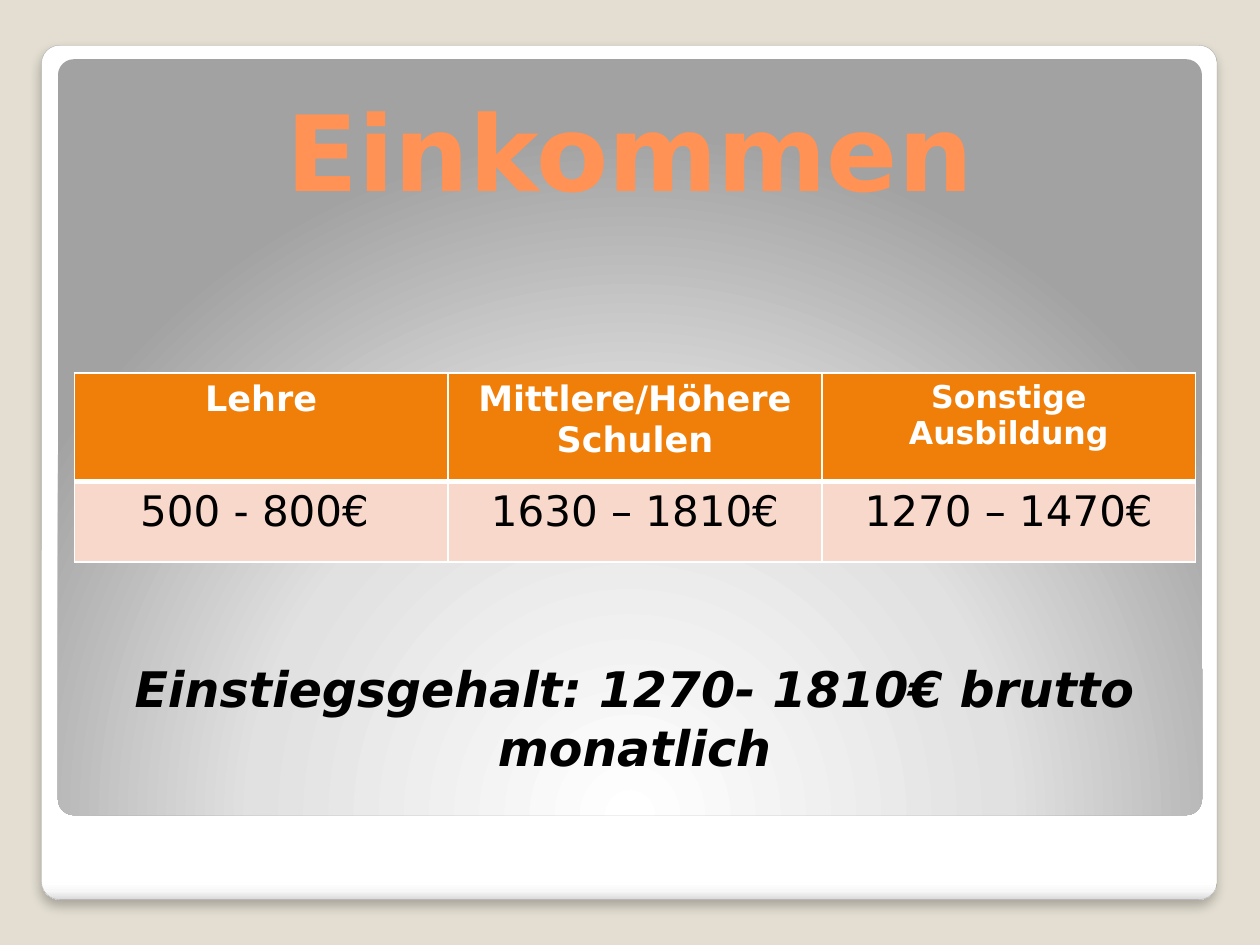
from lxml import etree
from pptx import Presentation
from pptx.dml.color import RGBColor
from pptx.enum.shapes import MSO_SHAPE as Shape
from pptx.enum.text import MSO_ANCHOR as Anchor, PP_ALIGN as Align
from pptx.oxml import parse_xml
from pptx.oxml.ns import nsdecls, qn
from pptx.util import Inches, Pt

BEIGE = RGBColor(0xE3, 0xDE, 0xD1)
WHITE = RGBColor(0xFF, 0xFF, 0xFF)
BLACK = RGBColor(0, 0, 0)
GREY = RGBColor(0xA4, 0xA4, 0xA4)
ORANGE = RGBColor(0xF0, 0x7F, 0x09)
PINK = RGBColor(0xF9, 0xD8, 0xCC)
CORAL = RGBColor(0xFF, 0x92, 0x54)

DOWNWARD = '<a:lin ang="5400000" scaled="0"/>'
FROM_BOTTOM = ('<a:path path="circle"><a:fillToRect l="50000" t="175000" '
               'r="50000" b="-75000"/></a:path>')


class SlideBuilder:
    font = "DejaVu Sans"

    def __init__(self, slide):
        self.slide = slide
        background = slide.background.fill
        background.solid()
        background.fore_color.rgb = BEIGE

    def panel(self, left, top, width, height, stops, direction):
        """Add a rounded panel with a gradient of (percent, colour) stops."""
        shape = self.slide.shapes.add_shape(
            Shape.ROUNDED_RECTANGLE, Inches(left), Inches(top), Inches(width), Inches(height))
        shape.adjustments[0] = 0.021
        shape.shadow.inherit = False
        shape.line.fill.background()
        shape.fill.background()
        stop_list = "".join(
            f'<a:gs pos="{percent * 1000}"><a:srgbClr val="{colour}"/></a:gs>'
            for percent, colour in stops)
        gradient = parse_xml(f'<a:gradFill {nsdecls("a")} rotWithShape="1">'
                             f'<a:gsLst>{stop_list}</a:gsLst>{direction}</a:gradFill>')
        properties = shape.element.spPr
        properties.replace(properties.find(qn("a:noFill")), gradient)
        return shape

    def drop_shadow(self, shape):
        effects = shape.element.spPr.find(qn("a:effectLst"))
        shadow = etree.SubElement(effects, qn("a:outerShdw"), blurRad=str(Pt(6)),
                                  dist=str(Pt(4)), dir="5400000", algn="t", rotWithShape="0")
        colour = etree.SubElement(shadow, qn("a:srgbClr"), val=str(BLACK))
        etree.SubElement(colour, qn("a:alpha"), val="25000")

    def set_text(self, text_frame, text, size, colour, bold=True, italic=False):
        text_frame.text = text
        paragraph = text_frame.paragraphs[0]
        paragraph.alignment = Align.CENTER
        font = paragraph.runs[0].font
        font.name, font.size, font.color.rgb = self.font, Pt(size), colour
        font.bold, font.italic = bold, italic

    def text(self, left, top, width, height, text, size, colour, italic=False):
        box = self.slide.shapes.add_textbox(
            Inches(left), Inches(top), Inches(width), Inches(height))
        frame = box.text_frame
        frame.word_wrap = True
        frame.vertical_anchor = Anchor.TOP
        frame.margin_top = frame.margin_bottom = 0
        self.set_text(frame, text, size, colour, italic=italic)

    def cell_borders(self, cell, top, bottom):
        properties = cell._tc.get_or_add_tcPr()
        widths = {"lnL": 1, "lnR": 1, "lnT": top, "lnB": bottom}
        for index, (side, width) in enumerate(widths.items()):
            properties.insert(index, parse_xml(
                f'<a:{side} {nsdecls("a")} w="{Pt(width)}"><a:solidFill>'
                f'<a:srgbClr val="{WHITE}"/></a:solidFill></a:{side}>'))

    def table(self, left, top, width, row_heights, rows):
        """Add a table; each row is (texts, sizes, text colour, fill, bold, border widths)."""
        table = self.slide.shapes.add_table(
            len(rows), len(rows[0][0]), Inches(left), Inches(top),
            Inches(width), Inches(sum(row_heights))).table
        for row, height, values in zip(table.rows, row_heights, rows):
            row.height = Inches(height)
            texts, sizes, colour, fill, bold, borders = values
            for cell, text, size in zip(row.cells, texts, sizes):
                cell.fill.solid()
                cell.fill.fore_color.rgb = fill
                self.cell_borders(cell, *borders)
                self.set_text(cell.text_frame, text, size, colour, bold)


def main():
    presentation = Presentation()
    presentation.slide_width, presentation.slide_height = Inches(10), Inches(7.5)
    builder = SlideBuilder(presentation.slides.add_slide(presentation.slide_layouts[6]))

    frame = builder.panel(0.33, 0.36, 9.33, 6.78,
                          [(0, "FFFFFF"), (98, "FFFFFF"), (99, "F7F7F7"), (100, "DADADA")],
                          DOWNWARD)
    frame.line.color.rgb = GREY
    frame.line.width = Pt(0.16)
    builder.drop_shadow(frame)
    builder.panel(0.46, 0.47, 9.08, 6,
                  [(0, "FFFFFF"), (55, "E1E1E1"), (100, "A2A2A2")], FROM_BOTTOM)

    builder.text(0.5, 0.69, 9, 1, "Einkommen", 60, CORAL)
    builder.text(0.61, 5.23, 8.85, 1, "Einstiegsgehalt: 1270- 1810€ brutto monatlich",
                 28, BLACK, italic=True)
    builder.table(0.59, 2.96, 8.9, [0.86, 0.64], [
        (["Lehre", "Mittlere/Höhere Schulen", "Sonstige Ausbildung"],
         [20, 20, 18], WHITE, ORANGE, True, (1, 3)),
        (["500 - 800€ ", "1630 – 1810€", "1270 – 1470€"],
         [24, 24, 24], BLACK, PINK, False, (3, 1)),
    ])
    presentation.save("out.pptx")


if __name__ == "__main__":
    main()
